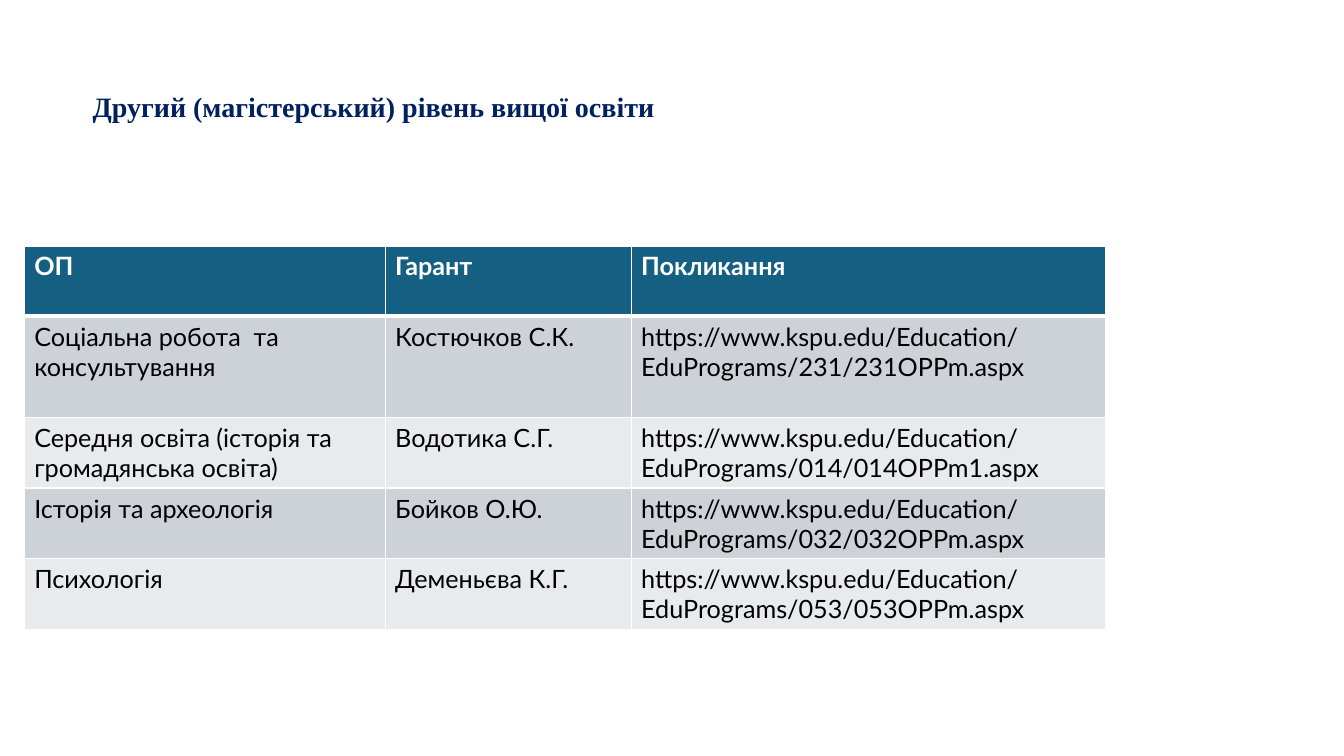
import pptx
import pptx.dml.color
import pptx.enum.text
import pptx.oxml
import pptx.oxml.ns
import pptx.util

COLOURS = {
    "heading": "002060",
    "header": "156082",
    "dark band": "CCD2D8",
    "light band": "E8EAED",
    "white": "FFFFFF",
    "black": "000000",
}
LINK = "https://www.kspu.edu/Education/EduPrograms/"
PROGRAMMES = [
    ("ОП", "Гарант", "Покликання"),
    ("Соціальна робота  та консультування", "Костючков С.К.", LINK + "231/231OPPm.aspx"),
    ("Середня освіта (історія та громадянська освіта)", "Водотика С.Г.", LINK + "014/014OPPm1.aspx"),
    ("Історія та археологія", "Бойков О.Ю.", LINK + "032/032OPPm.aspx"),
    ("Психологія", "Деменьєва К.Г.", LINK + "053/053OPPm.aspx"),
]


class ProgrammePage:
    """Draws styled elements on one page, with lengths in percent of its size."""

    def __init__(self, deck):
        self.deck = deck
        self.page = deck.slides.add_slide(deck.slide_layouts[6])

    def across(self, percent):
        return round(self.deck.slide_width * percent / 100)

    def down(self, percent):
        return round(self.deck.slide_height * percent / 100)

    def colour(self, name):
        return pptx.dml.color.RGBColor.from_string(COLOURS[name])

    def style(self, paragraph, face, size, colour, bold):
        for span in paragraph.runs:
            span.font.name = face
            span.font.size = pptx.util.Pt(size)
            span.font.color.rgb = self.colour(colour)
            span.font.bold = bold

    def heading(self, text, left, top, width, height):
        box = self.page.shapes.add_textbox(
            self.across(left), self.down(top), self.across(width), self.down(height))
        box.text_frame.word_wrap = True
        box.text_frame.text = text
        paragraph = box.text_frame.paragraphs[0]
        paragraph.alignment = pptx.enum.text.PP_ALIGN.JUSTIFY
        paragraph.line_spacing = pptx.util.Pt(15)
        self.style(paragraph, "Times New Roman", 20, "heading", True)

    def border(self, cell, side, points):
        line = pptx.oxml.parse_xml(
            f'<a:ln{side} {pptx.oxml.ns.nsdecls("a")} w="{pptx.util.Pt(points)}">'
            f'<a:solidFill><a:srgbClr val="{COLOURS["white"]}"/></a:solidFill></a:ln{side}>')
        cell._tc.get_or_add_tcPr().append(line)

    def table(self, records, left, top, widths, heights):
        table = self.page.shapes.add_table(
            len(records), len(widths), self.across(left), self.down(top),
            self.across(sum(widths)), self.down(sum(heights))).table
        table.horz_banding = False
        for column, width in zip(table.columns, widths):
            column.width = self.across(width)
        for row, height in zip(table.rows, heights):
            row.height = self.down(height)
        for number, record in enumerate(records):
            is_header = number == 0
            band = "header" if is_header else ("light band", "dark band")[number % 2]
            for position, text in enumerate(record):
                cell = table.cell(number, position)
                cell.text_frame.text = text
                self.style(cell.text_frame.paragraphs[0], "Lato", 18,
                           "white" if is_header else "black", is_header)
                for side in "LRTB":
                    under_header = (number, side) in ((0, "B"), (1, "T"))
                    self.border(cell, side, 3 if under_header else 1)
                cell.fill.solid()
                cell.fill.fore_color.rgb = self.colour(band)


def main():
    deck = pptx.Presentation()
    deck.slide_width = pptx.util.Inches(13.33)
    deck.slide_height = pptx.util.Inches(7.5)
    page = ProgrammePage(deck)
    page.heading("Другий (магістерський) рівень вищої освіти", 6.15, 12.8, 55.44, 16.8)
    page.table(PROGRAMMES, 1.8, 32.53, (26.86, 18.3, 35.33), (9.3, 13.4, 9.33, 9.33, 9.33))
    deck.save("out.pptx")


if __name__ == "__main__":
    main()
